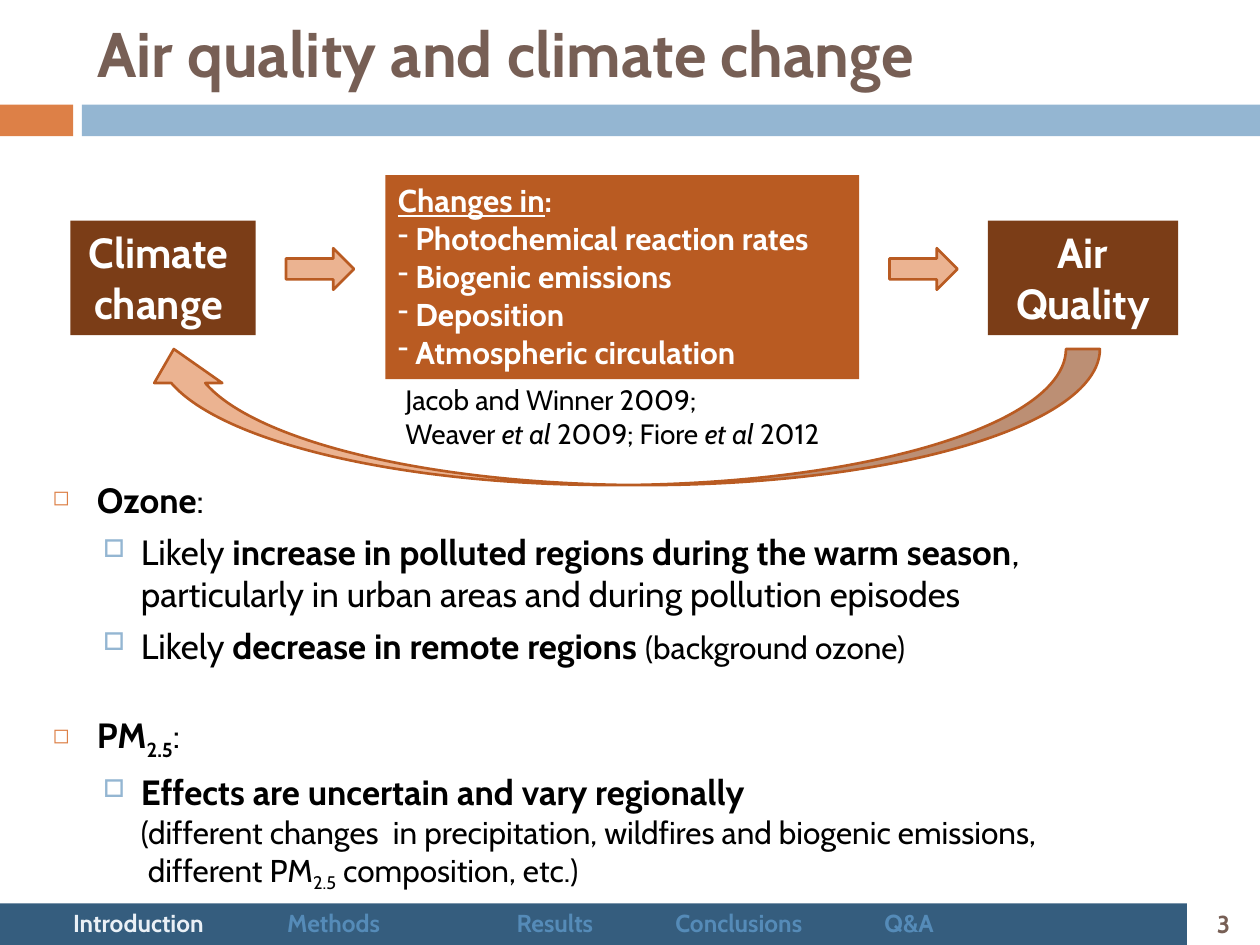
from lxml.etree import SubElement
from pptx import Presentation
from pptx.dml.color import RGBColor
from pptx.enum.shapes import MSO_SHAPE
from pptx.enum.text import MSO_ANCHOR, MSO_AUTO_SIZE, PP_ALIGN
from pptx.oxml.ns import qn
from pptx.util import Inches, Pt

WHITE = RGBColor(0xFF, 0xFF, 0xFF)
BLACK = RGBColor(0x00, 0x00, 0x00)
TAUPE = RGBColor(0x77, 0x5F, 0x55)
ORANGE = RGBColor(0xDD, 0x80, 0x47)
SKY = RGBColor(0x94, 0xB6, 0xD2)
NAVY = RGBColor(0x35, 0x5D, 0x7E)
BROWN = RGBColor(0x7B, 0x3D, 0x17)
RUST = RGBColor(0xB9, 0x5B, 0x22)
PEACH = RGBColor(0xEB, 0xB3, 0x91)
ACTIVE = RGBColor(0xEA, 0xF0, 0xF6)
INACTIVE = RGBColor(0x55, 0x8B, 0xB8)


class SlideBuilder:
    font_name = "Cabin"

    def __init__(self, slide):
        self.slide = slide

    def format_run(self, run, size, color, marks=""):
        font = run.font
        font.name = self.font_name
        font.size = Pt(size)
        font.color.rgb = color
        font.bold = "b" in marks
        font.italic = "i" in marks
        font.underline = "u" in marks
        if "s" in marks:
            font._element.set("baseline", "-25000")

    def add_pieces(self, paragraph, pieces, size, color):
        for text, marks, *own_size in pieces:
            for index, line in enumerate(text.split("\n")):
                if index:
                    paragraph.add_line_break()
                if line:
                    run = paragraph.add_run()
                    run.text = line
                    self.format_run(run, own_size[0] if own_size else size, color, marks)

    def fill_frame(self, frame, paragraphs, size, color, align):
        for index, pieces in enumerate(paragraphs):
            paragraph = frame.add_paragraph() if index else frame.paragraphs[0]
            paragraph.alignment = align
            self.add_pieces(paragraph, pieces, size, color)

    def bullet(self, paragraph, char, margin=0, indent=0, color=None, percent=100):
        properties = paragraph._p.get_or_add_pPr()
        properties.set("marL", str(Inches(margin)))
        properties.set("indent", str(Inches(indent)))
        if color is not None:
            holder = SubElement(properties, qn("a:buClr"))
            SubElement(holder, qn("a:srgbClr")).set("val", str(color))
        SubElement(properties, qn("a:buSzPct")).set("val", str(percent * 1000))
        SubElement(properties, qn("a:buChar")).set("char", char)

    def title(self, text, left, top, width, height):
        heading = self.slide.shapes.title
        heading.left, heading.top = Inches(left), Inches(top)
        heading.width, heading.height = Inches(width), Inches(height)
        frame = heading.text_frame
        frame.text = text
        frame.auto_size = MSO_AUTO_SIZE.NONE
        frame.vertical_anchor = MSO_ANCHOR.MIDDLE
        frame.paragraphs[0].alignment = PP_ALIGN.LEFT
        self.format_run(frame.paragraphs[0].runs[0], 36, TAUPE, "b")

    def shape(self, kind, left, top, width, height, fill, line=None):
        shape = self.slide.shapes.add_shape(
            kind, Inches(left), Inches(top), Inches(width), Inches(height))
        shape.shadow.inherit = False
        shape.fill.solid()
        shape.fill.fore_color.rgb = fill
        if line is None:
            shape.line.fill.background()
        else:
            shape.line.color.rgb = line
            shape.line.width = Pt(1.5)
        return shape

    def bar(self, left, top, width, height, fill):
        return self.shape(MSO_SHAPE.RECTANGLE, left, top, width, height, fill)

    def box(self, left, top, width, height, fill, paragraphs, size, align):
        frame = self.bar(left, top, width, height, fill).text_frame
        frame.word_wrap = True
        frame.vertical_anchor = MSO_ANCHOR.TOP
        self.fill_frame(frame, paragraphs, size, WHITE, align)
        return frame

    def text(self, left, top, width, height, paragraphs, size, color,
             align=PP_ALIGN.LEFT, anchor=MSO_ANCHOR.TOP):
        frame = self.slide.shapes.add_textbox(
            Inches(left), Inches(top), Inches(width), Inches(height)).text_frame
        frame.word_wrap = True
        frame.vertical_anchor = anchor
        self.fill_frame(frame, paragraphs, size, color, align)
        return frame

    def outline(self, left, top, width, height, entries):
        frame = self.text(left, top, width, height,
                          [pieces for _, _, pieces in entries], 20, BLACK)
        for paragraph, (level, space, _) in zip(frame.paragraphs, entries):
            paragraph.level = level
            paragraph.space_before = Pt(space)
            if level:
                self.bullet(paragraph, "□", 0.7, -0.3, SKY, 70)
            else:
                self.bullet(paragraph, "◻", 0.35, -0.35, ORANGE, 60)

    def navigation(self, left, top, width, height, current, others):
        frame = self.text(left, top, width, height, [[(current, "b")]], 14, ACTIVE)
        frame.margin_left = 0
        paragraph = frame.paragraphs[0]
        self.add_pieces(paragraph, [("\t" + name, "b") for name in others], 14, INACTIVE)
        tabs = SubElement(paragraph._p.get_or_add_pPr(), qn("a:tabLst"))
        for stop in others.values():
            tab = SubElement(tabs, qn("a:tab"))
            tab.set("pos", str(Inches(stop - left)))
            tab.set("algn", "l")


def main():
    presentation = Presentation()
    presentation.slide_width, presentation.slide_height = Inches(10), Inches(7.5)
    builder = SlideBuilder(presentation.slides.add_slide(presentation.slide_layouts[5]))

    builder.bar(0.65, 0.83, 9.35, 0.25, SKY)
    builder.bar(0, 7.17, 9.42, 0.33, NAVY)
    builder.bar(0, 0.83, 0.58, 0.25, ORANGE)
    builder.text(9.42, 7.17, 0.58, 0.33, [[("3", "b")]], 14, TAUPE,
                 PP_ALIGN.CENTER, MSO_ANCHOR.MIDDLE)
    builder.title("Air quality and climate change", 0.67, 0, 8.92, 0.83)

    builder.outline(0.32, 3.75, 9.68, 3.25, [
        (0, 7, [("Ozone", "b"), (":", "")]),
        (1, 5.5, [("Likely ", ""),
                  ("increase in polluted regions during the warm season", "b"),
                  (", \nparticularly in urban areas and during pollution episodes", "")]),
        (1, 5.5, [("Likely ", ""), ("decrease in remote regions ", "b"),
                  ("(background ozone)", "", 18)]),
        (0, 27, [("PM", "b"), ("2.5", "bs"), (":", "")]),
        (1, 5.5, [("Effects are uncertain and vary regionally \n", "b"),
                  ("(different changes  in precipitation, wildfires and biogenic emissions, "
                   "\n different PM", "", 18),
                  ("2.5", "s", 18), (" composition, etc.)", "", 18)]),
    ])

    builder.box(0.56, 1.75, 1.47, 0.91, BROWN,
                [[("Climate ", "b")], [("change ", "b")]], 24, PP_ALIGN.CENTER)
    builder.box(7.84, 1.75, 1.51, 0.91, BROWN,
                [[("Air Quality", "b")]], 24, PP_ALIGN.CENTER)
    drivers = ["Photochemical reaction rates", "Biogenic emissions",
               "Deposition", "Atmospheric circulation"]
    changes = builder.box(3.06, 1.39, 3.76, 1.62, RUST,
                          [[("Changes in", "bu"), (":", "b")]]
                          + [[(" " + driver, "b")] for driver in drivers],
                          18, PP_ALIGN.LEFT)
    for driver_line in changes.paragraphs[1:]:
        builder.bullet(driver_line, "-")
    for left in (2.27, 7.06):
        builder.shape(MSO_SHAPE.RIGHT_ARROW, left, 1.97, 0.54, 0.33, PEACH, RUST)
    builder.text(3.12, 2.99, 5, 0.64, [
        [("Jacob and Winner 2009;", "")],
        [("Weaver ", ""), ("et al", "i"), (" 2009; Fiore ", ""),
         ("et al", "i"), (" 2012", "")],
    ], 16, BLACK)
    feedback = builder.shape(MSO_SHAPE.CURVED_UP_ARROW, 1.11, 2.77, 7.62, 1.08, PEACH, RUST)
    feedback._element.spPr.xfrm.set("flipH", "1")

    builder.navigation(0.58, 7.16, 8.84, 0.34, "Introduction",
                       {"Methods": 2.28, "Results": 4.1, "Conclusions": 5.36, "Q&A": 7.02})
    presentation.save("out.pptx")


if __name__ == "__main__":
    main()
